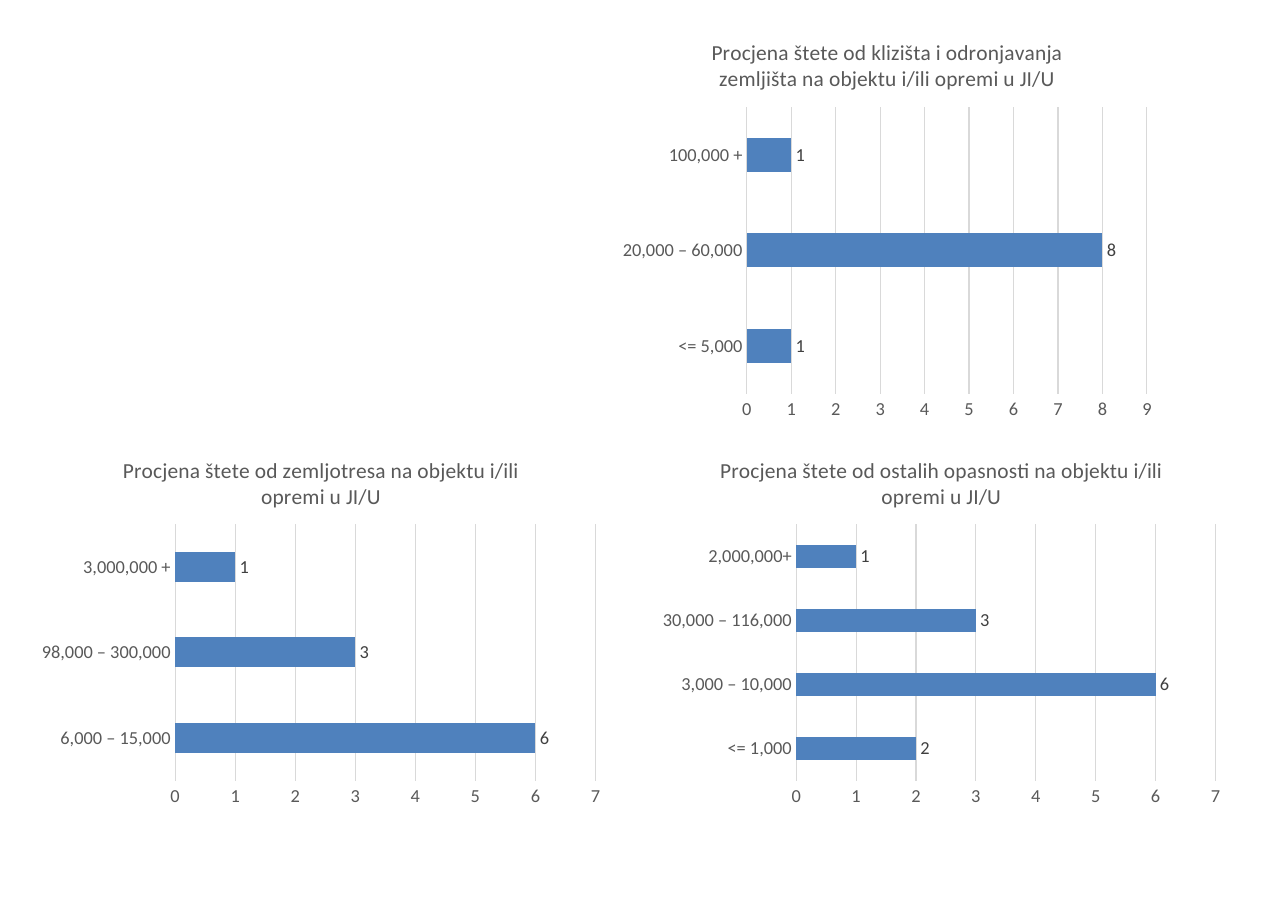
from lxml.etree import fromstring
from pptx import Presentation
from pptx.chart.data import CategoryChartData
from pptx.dml.color import RGBColor
from pptx.enum.chart import XL_CHART_TYPE, XL_LABEL_POSITION, XL_TICK_MARK
from pptx.oxml.ns import nsdecls
from pptx.util import Inches, Pt

THEME = {
    "font": "Calibri", "title": 14, "label": 12,
    "text": "595959", "value": "404040", "bar": "4F81BD",
    "grid": "D9D9D9", "back": "FFFFFF",
}
WIDTH, HEIGHT = 11.69, 8.27
LOWER_TOP, LOWER_HEIGHT = 48.04, 41.35

# Chart title, frame in percent of the slide (left, top, width, height)
# and bars from bottom to top
CHARTS = [
    ("Procjena štete od ostalih opasnosti na objektu i/ili opremi u JI/U",
     (50.56, LOWER_TOP, 45.08, LOWER_HEIGHT),
     {"<= 1,000": 2, "3,000 – 10,000": 6, "30,000 – 116,000": 3, "2,000,000+": 1}),
    ("Procjena štete od klizišta i odronjavanja zemljišta na objektu i/ili opremi u JI/U",
     (47.5, 2.12, 42.77, 44.86),
     {"<= 5,000": 1, "20,000 – 60,000": 8, "100,000 +": 1}),
    ("Procjena štete od zemljotresa na objektu i/ili opremi u JI/U",
     (2.34, LOWER_TOP, 45.17, LOWER_HEIGHT),
     {"6,000 – 15,000": 6, "98,000 – 300,000": 3, "3,000,000 +": 1}),
]


def set_font(font, size, color):
    values = {"name": THEME["font"], "size": Pt(THEME[size]), "bold": False}
    for name, value in values.items():
        setattr(font, name, value)
    font.color.rgb = RGBColor.from_string(THEME[color])


def set_line(line):
    line.color.rgb = RGBColor.from_string(THEME["grid"])
    line.width = Pt(0.75)


prs = Presentation()
prs.slide_width, prs.slide_height = Inches(WIDTH), Inches(HEIGHT)
s = prs.slides.add_slide(prs.slide_layouts[6])

for title, frame, bars in CHARTS:
    data = CategoryChartData()
    data.categories = list(bars)
    data.add_series("Series 1", list(bars.values()))
    box = [Inches(share / 100 * side)
           for share, side in zip(frame, (WIDTH, HEIGHT) * 2)]
    chart = s.shapes.add_chart(XL_CHART_TYPE.BAR_CLUSTERED, *box, data).chart
    chart.has_legend = False
    set_font(chart.font, "label", "text")

    # White chart background without an outline
    chart._chartSpace.get_or_add_txPr().addprevious(fromstring(
        f'<c:spPr {nsdecls("c", "a")}><a:solidFill><a:srgbClr val="{THEME["back"]}"/>'
        '</a:solidFill><a:ln><a:noFill/></a:ln></c:spPr>'))

    # Title
    chart.has_title = True
    tf = chart.chart_title.text_frame
    tf.text = title
    set_font(tf.paragraphs[0].runs[0].font, "title", "text")
    chart.chart_title.include_in_layout = False

    # Axes
    for axis in (chart.category_axis, chart.value_axis):
        axis.major_tick_mark = axis.minor_tick_mark = XL_TICK_MARK.NONE
        set_font(axis.tick_labels.font, "label", "text")
    set_line(chart.category_axis.format.line)
    chart.value_axis.format.line.fill.background()
    chart.value_axis.has_major_gridlines = True
    set_line(chart.value_axis.major_gridlines.format.line)
    chart.value_axis.minimum_scale = 0
    chart.value_axis.maximum_scale = max(bars.values()) + 1
    chart.value_axis.major_unit = 1

    # Bars and their values
    plot = chart.plots[0]
    plot.gap_width = 182
    plot.vary_by_categories = False
    fill = plot.series[0].format.fill
    fill.solid()
    fill.fore_color.rgb = RGBColor.from_string(THEME["bar"])
    labels = plot.series[0].data_labels
    labels.show_value = True
    labels.position = XL_LABEL_POSITION.OUTSIDE_END
    set_font(labels.font, "label", "value")

prs.save("out.pptx")
